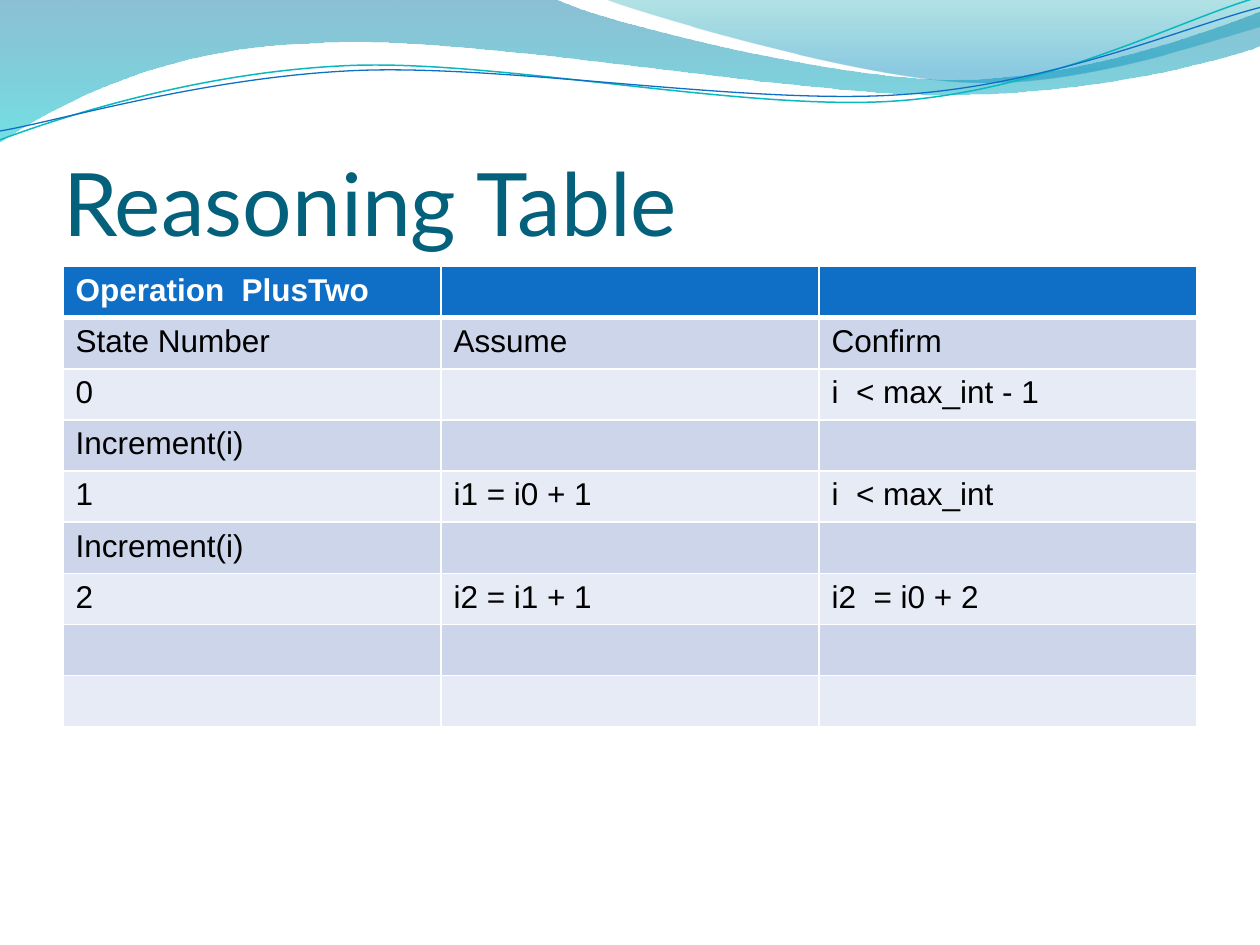
"""Builds the Reasoning Table slide with its wave header."""
import math
from dataclasses import dataclass

from lxml import etree
from pptx import Presentation
from pptx import util as u
from pptx.dml.color import RGBColor
from pptx.enum import text
from pptx.oxml.ns import qn


@dataclass(frozen=True)
class Theme:
    """Colours, fonts and type sizes of the deck."""
    title: str = "04617B"
    accent: str = "0F6FC6"
    teal: str = "0AB8BF"
    white: str = "FFFFFF"
    black: str = "000000"
    bands: tuple = ("CCD5EA", "E7EBF5")
    title_font: str = "Lato"
    body_font: str = "Arial"
    title_size: int = 50
    body_size: int = 18
    rule: int = 1
    header_rule: int = 3


THEME = Theme()
WIDTH, HEIGHT = 10, 7.5
MARGIN = WIDTH * 0.05
TILT = -2.7
ROWS = [
    ["Operation  PlusTwo", "", ""],
    ["State Number", "Assume", "Confirm"],
    ["0", "", "i  < max_int - 1"],
    ["Increment(i)", "", ""],
    ["1", "i1 = i0 + 1", "i  < max_int"],
    ["Increment(i)", "", ""],
    ["2", "i2 = i1 + 1", "i2  = i0 + 2"],
    ["", "", ""],
    ["", "", ""],
]
BANDS = [
    ([[(0, 0)], [(4.4, -0.01)],
      [(4.76, 0.17), (6.64, 0.63), (7.58, 0.63)],
      [(8.53, 0.63), (9.58, 0.26), (10, 0.09)],
      [(10.01, 0.36)],
      [(9.83, 0.44), (8.7, 0.76), (7.46, 0.75)],
      [(6.22, 0.75), (3.82, 0.28), (2.57, 0.34)],
      [(1.29, 0.36), (0.46, 0.83), (-0.01, 1.13)]],
     [(0, "0074A1", 45), (1, "00C6CF", 55)]),
    ([[(4.79, -0.01)],
      [(5.09, 0.11), (6.82, 0.62), (7.69, 0.65)],
      [(8.56, 0.69), (9.61, 0.32), (10, 0.21)],
      [(10, 0)]],
     [(0, "00A1A9", 30), (0.8, "008BBF", 45)]),
]
STRANDS = [
    ([[(0, 1.11)],
      [(0.48, 0.93), (1.58, 0.57), (2.77, 0.52)],
      [(3.95, 0.47), (5.93, 0.89), (7.13, 0.8)],
      [(8.33, 0.71), (9.38, 0.15), (9.98, -0.02)]], (4.99, 0.58), THEME.teal, 0.85),
    ([[(0, 1.04)],
      [(0.47, 0.96), (1.64, 0.61), (2.83, 0.56)],
      [(4.03, 0.51), (5.97, 0.84), (7.17, 0.75)],
      [(8.36, 0.67), (9.41, 0.21), (10, 0.06)]], (5, 0.59), THEME.accent, 0.75),
]


def apply(target, values):
    """Set each named attribute of the target."""
    for name, value in values.items():
        setattr(target, name, value)


def style_font(font, color, **values):
    """Give a font its colour and other values."""
    apply(font, values)
    font.color.rgb = RGBColor.from_string(color)


def turn(point, center, degrees):
    """Rotate a point clockwise about a center."""
    angle = math.radians(degrees)
    x, y = point[0] - center[0], point[1] - center[1]
    return (center[0] + x * math.cos(angle) - y * math.sin(angle),
            center[1] + x * math.sin(angle) + y * math.cos(angle))


def add_outline(shapes, box, steps, close):
    """Draw a freeform of lines and cubic curves from the box's corner."""
    points = [(u.Inches(box[0] + x), u.Inches(box[1] + y)) for step in steps for x, y in step]
    builder = shapes.build_freeform(*points[0])
    builder.add_line_segments(points[1:], close=close)
    shape = builder.convert_to_shape()
    shape.shadow.inherit = False
    lines = iter(list(shape._element.iter(qn("a:lnTo"))))
    for step in steps[1:]:
        group = [next(lines) for _ in step]
        if len(group) == 3:
            curve = etree.Element(qn("a:cubicBezTo"))
            group[0].addprevious(curve)
            for line in group:
                curve.append(line[0])
                line.getparent().remove(line)
    return shape


def add_waves(page, box):
    """Place the two gradient bands and the group of thin strands."""
    for steps, stops in BANDS:
        shape = add_outline(page.shapes, box, steps, True)
        shape.line.fill.background()
        shape.fill.gradient()
        shape.fill.gradient_angle = 270
        for stop, (position, color, _) in zip(shape.fill.gradient_stops, stops):
            stop.position = position
            stop.color.rgb = RGBColor.from_string(color)
        tones = shape._element.spPr.iter(qn("a:srgbClr"))
        for tone, (_, _, opacity) in zip(tones, stops):
            etree.SubElement(tone, qn("a:alpha"), val=str(opacity * 1000))
    group = page.shapes.add_group_shape()
    for steps, center, color, weight in STRANDS:
        level = [[turn(point, center, -TILT) for point in step] for step in steps]
        shape = add_outline(group.shapes, box, level, False)
        shape.rotation = TILT
        shape.fill.background()
        shape.line.width = u.Pt(weight)
        shape.line.color.rgb = RGBColor.from_string(color)


def add_title(page, box, words):
    """Fill and format the title placeholder, in front of the waves."""
    title = page.shapes.title
    page.shapes._spTree.append(title._element)
    apply(title, dict(zip(("left", "top", "width", "height"), map(u.Inches, box))))
    frame = title.text_frame
    apply(frame, {"margin_left": 0, "margin_top": u.Inches(0.05), "margin_right": 0,
                  "margin_bottom": 0, "word_wrap": True,
                  "auto_size": text.MSO_AUTO_SIZE.NONE,
                  "vertical_anchor": text.MSO_ANCHOR.BOTTOM})
    para = frame.paragraphs[0]
    para.alignment = text.PP_ALIGN.LEFT
    span = para.add_run()
    span.text = words
    style_font(span.font, THEME.title, name=THEME.title_font, size=u.Pt(THEME.title_size))


def add_borders(cell, header):
    """Rule the four sides of a cell, heavier below the header."""
    properties = cell._tc.get_or_add_tcPr()
    for side in "LRTB":
        weight = THEME.header_rule if header and side == "B" else THEME.rule
        line = etree.SubElement(properties, qn(f"a:ln{side}"), w=str(u.Pt(weight)))
        fill = etree.SubElement(line, qn("a:solidFill"))
        etree.SubElement(fill, qn("a:srgbClr"), val=THEME.white)


def add_grid(page, box, rows):
    """Place the table with a header row and alternating bands."""
    frame = page.shapes.add_table(len(rows), len(rows[0]), *map(u.Inches, box))
    for row, words in enumerate(rows):
        header = row == 0
        fill = THEME.accent if header else THEME.bands[(row - 1) % 2]
        for column, word in enumerate(words):
            cell = frame.table.cell(row, column)
            add_borders(cell, header)
            cell.fill.solid()
            cell.fill.fore_color.rgb = RGBColor.from_string(fill)
            if word:
                span = cell.text_frame.paragraphs[0].add_run()
                span.text = word
                style_font(span.font, THEME.white if header else THEME.black, bold=header,
                           name=THEME.body_font, size=u.Pt(THEME.body_size))


def main():
    """Build the deck and save it."""
    deck = Presentation()
    apply(deck, {"slide_width": u.Inches(WIDTH), "slide_height": u.Inches(HEIGHT)})
    page = deck.slides.add_slide(deck.slide_layouts.get_by_name("Title Only"))
    inner = WIDTH - 2 * MARGIN
    add_waves(page, (0, 0))
    add_title(page, (MARGIN, 0.77, inner, 1.25), "Reasoning Table")
    add_grid(page, (MARGIN, u.Pt(152.4).inches, inner, 3.65), ROWS)
    deck.save("out.pptx")


if __name__ == "__main__":
    main()
